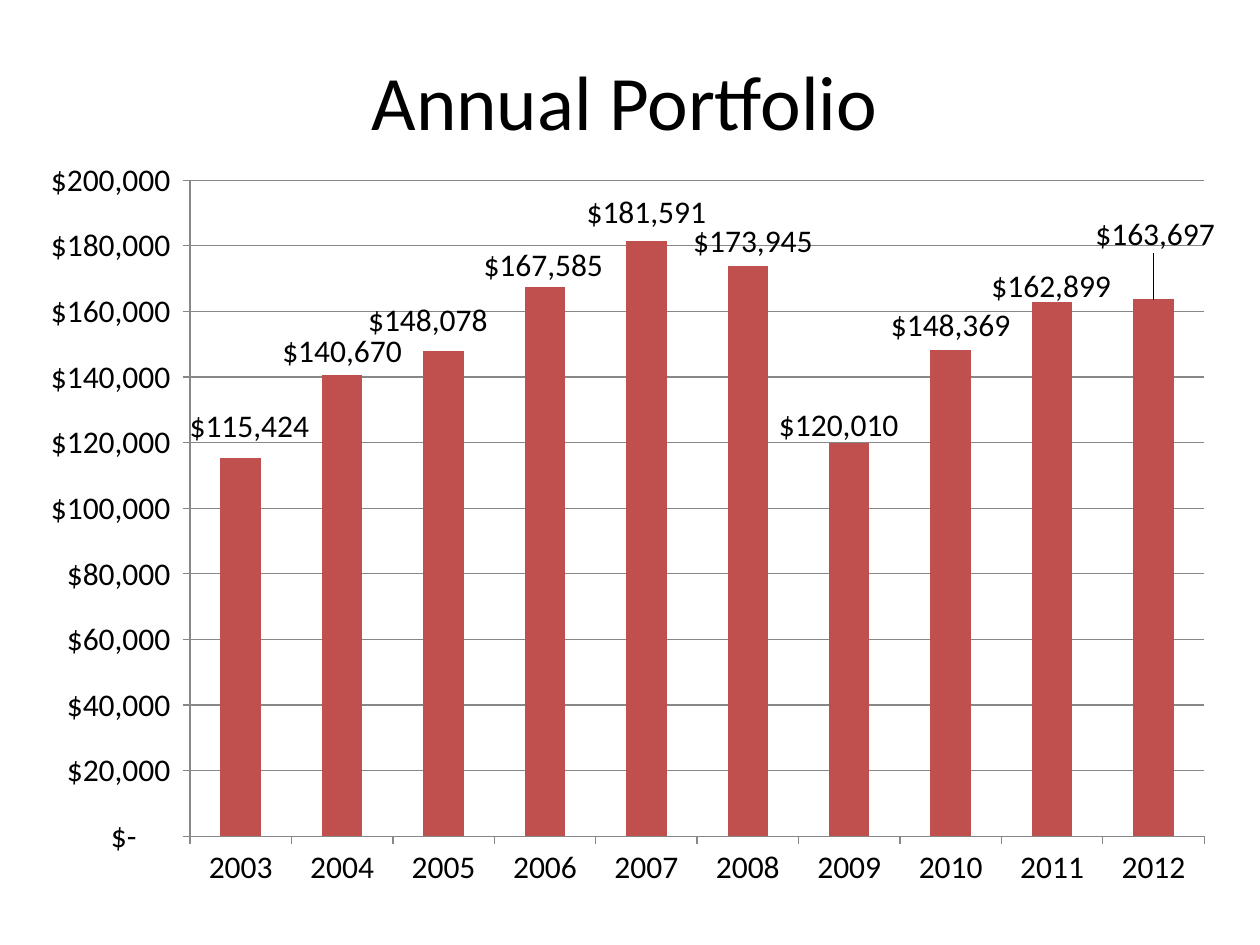
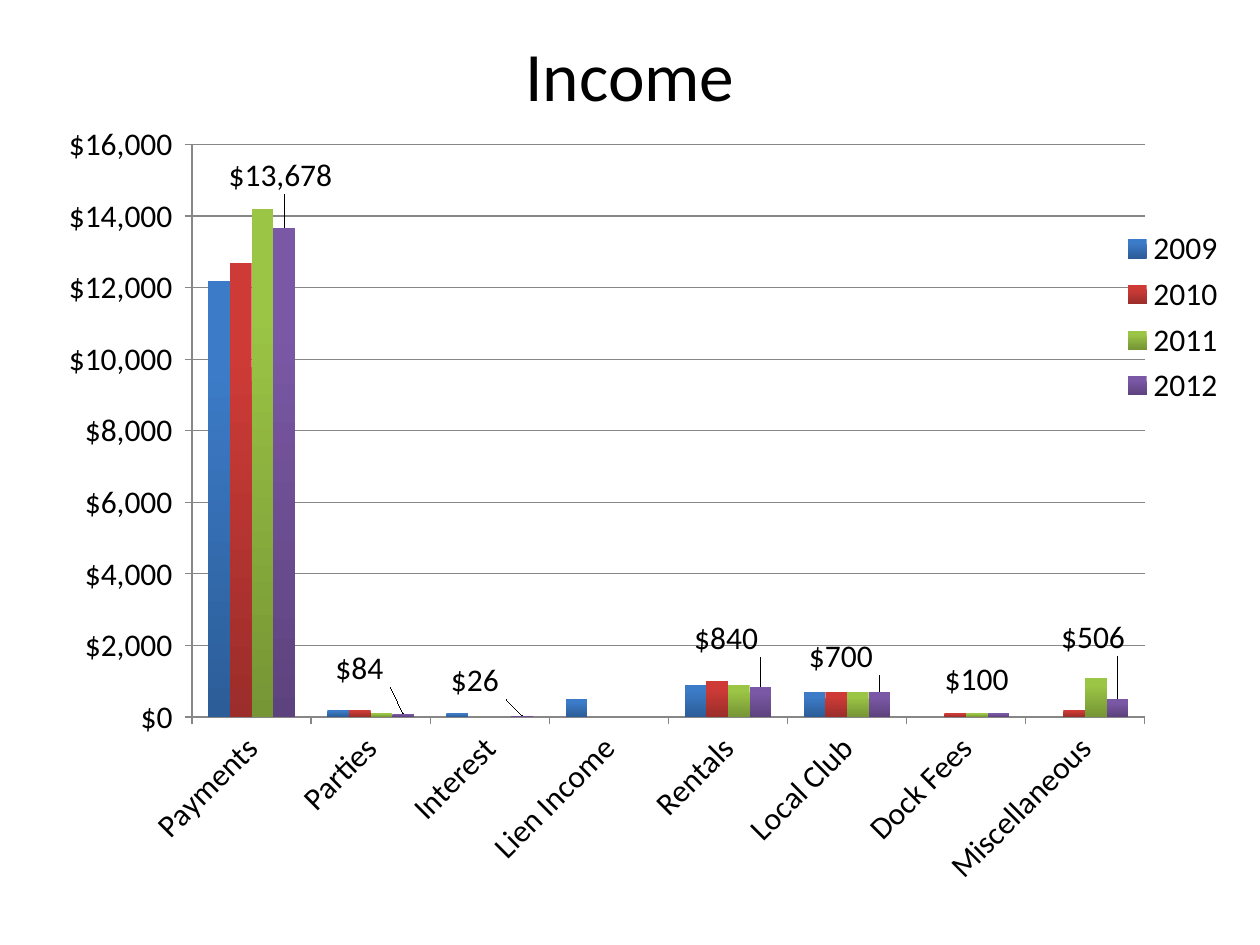
"""Build two financial slides: annual portfolio and income by source."""
from lxml.etree import SubElement
from pptx import Presentation
from pptx.chart.data import CategoryChartData
from pptx.dml.color import RGBColor
from pptx.enum.chart import XL_CHART_TYPE, XL_LABEL_POSITION, XL_LEGEND_POSITION, XL_TICK_MARK
from pptx.enum.text import MSO_ANCHOR, MSO_AUTO_SIZE, PP_ALIGN
from pptx.oxml.ns import qn
from pptx.util import Pt

COLORS = {"text": "000000", "grid": "878787", "portfolio": "C0504D"}
INCOME_GRADIENTS = {
    "2009": ("3C7BC7", "2C5D98"),
    "2010": ("CE3B37", "9B2D2A"),
    "2011": ("9BC545", "769535"),
    "2012": ("7B58A6", "5D437E"),
}
FONT = "Calibri"
ACCOUNTING = r'_("$"* #,##0_);_("$"* \(#,##0\);_("$"* "-"??_);_(@_)'
CURRENCY = r'"$"#,##0_);[Red]\("$"#,##0\)'


def set_layout(parent, index, **settings):
    for old_layout in parent.findall(qn("c:layout")):
        parent.remove(old_layout)
    layout = parent.makeelement(qn("c:layout"))
    parent.insert(index, layout)
    manual = SubElement(layout, qn("c:manualLayout"))
    for tag, value in settings.items():
        SubElement(manual, qn(f"c:{tag}")).set("val", str(value))


def add_column_slide(title, title_size, title_box, chart_box, data, top, step, plot_area, offsets):
    slide = presentation.slides.add_slide(presentation.slide_layouts[5])
    heading = slide.shapes.title
    heading.left, heading.top, heading.width, heading.height = map(Pt, title_box)
    frame = heading.text_frame
    frame.text = title
    frame.auto_size = MSO_AUTO_SIZE.NONE
    frame.vertical_anchor = MSO_ANCHOR.MIDDLE
    frame.paragraphs[0].alignment = PP_ALIGN.CENTER
    title_font = frame.paragraphs[0].runs[0].font
    title_font.name, title_font.size = FONT, Pt(title_size)
    title_font.color.rgb = RGBColor.from_string(COLORS["text"])

    chart = slide.shapes.add_chart(XL_CHART_TYPE.COLUMN_CLUSTERED, *map(Pt, chart_box), data).chart
    chart.has_title = False
    chart.has_legend = False
    chart.font.name, chart.font.size = FONT, Pt(18)
    chart.font.color.rgb = RGBColor.from_string(COLORS["text"])
    values = chart.value_axis
    values.minimum_scale, values.maximum_scale, values.major_unit = 0, top, step
    values.tick_labels.number_format = data.number_format
    values.tick_labels.number_format_is_linked = False
    for line in (values.format.line, values.major_gridlines.format.line, chart.category_axis.format.line):
        line.color.rgb = RGBColor.from_string(COLORS["grid"])
        line.width = Pt(0.75)
    for axis in (values, chart.category_axis):
        axis.major_tick_mark = XL_TICK_MARK.OUTSIDE
        axis.minor_tick_mark = XL_TICK_MARK.NONE
    columns = chart.plots[0]
    columns.gap_width, columns.overlap = 150, 0
    columns.vary_by_categories = False
    left, upper, width, height = plot_area
    set_layout(chart._chartSpace.chart.plotArea, 0, layoutTarget="inner", xMode="edge",
               yMode="edge", x=left, y=upper, w=width, h=height)

    latest = columns.series[-1]
    labels = latest.data_labels
    labels.show_value = True
    labels.position = XL_LABEL_POSITION.OUTSIDE_END
    labels.number_format, labels.number_format_is_linked = data.number_format, False
    labels.font.size = Pt(18)
    for point, (right, down) in offsets.items():
        label = latest.points[point].data_label
        label.position = XL_LABEL_POSITION.OUTSIDE_END
        label.font.size = Pt(18)
        element = labels._element.findall(qn("c:dLbl"))[-1]
        set_layout(element, 1, x=round(right / chart_box[2], 4), y=round(down / chart_box[3], 4))
        number_format = element.makeelement(qn("c:numFmt"))
        number_format.set("formatCode", data.number_format)
        number_format.set("sourceLinked", "0")
        element.insert(2, number_format)
    return chart


presentation = Presentation()
presentation.slide_width, presentation.slide_height = Pt(720), Pt(540)

portfolio = CategoryChartData(number_format=ACCOUNTING)
portfolio.categories = [str(year) for year in range(2003, 2013)]
portfolio.add_series("Series 1", [115424, 140670, 148078, 167585, 181591,
                                  173945, 120010, 148369, 162899, 163697])
portfolio_chart = add_column_slide(
    "Annual Portfolio", 44, (30, 24, 654, 66), (12, 84, 690, 432), portfolio,
    200000, 20000, (0.14, 0.044, 0.84, 0.868),
    {0: (5, -4.5), 2: (-9, -3.5), 3: (-1, 1.5), 4: (0, -2.5), 5: (3, 0),
     6: (-6, 4), 8: (-0.5, 5), 9: (1, -23.5)})
portfolio_fill = portfolio_chart.plots[0].series[0].format.fill
portfolio_fill.solid()
portfolio_fill.fore_color.rgb = RGBColor.from_string(COLORS["portfolio"])

income = CategoryChartData(number_format=CURRENCY)
income.categories = ["Payments", "Parties", "Interest", "Lien Income",
                     "Rentals", "Local Club", "Dock Fees", "Miscellaneous"]
income.add_series("2009", [12200, 200, 100, 500, 900, 700, None, None])
income.add_series("2010", [12700, 200, 0, None, 1000, 700, 100, 200])
income.add_series("2011", [14200, 100, 0, None, 900, 700, 100, 1100])
income.add_series("2012", [13678, 84, 26, None, 840, 700, 100, 506])
income_chart = add_column_slide(
    "Income", 39.6, (54, 12, 612, 60), (18, 60, 690, 462), income,
    16000, 2000, (0.133, 0.049, 0.789, 0.708),
    {0: (0, -16), 1: (-23, -12.5), 2: (-25, -6.5), 4: (-17.5, -14),
     5: (-20, -6.5), 6: (-10.5, -5.5), 7: (-12, -21.5)})
for year_series in income_chart.plots[0].series:
    year_fill = year_series.format.fill
    year_fill.gradient()
    year_fill.gradient_angle = 270
    for stop, color, position in zip(year_fill.gradient_stops, INCOME_GRADIENTS[year_series.name], (0.2, 1)):
        stop.color.rgb = RGBColor.from_string(color)
        stop.position = position

source_labels = income_chart.category_axis.tick_labels
source_labels.font.size = Pt(18)
income_chart.category_axis._element.find(qn("c:txPr")).find(qn("a:bodyPr")).set("rot", "-2700000")
income_chart.has_legend = True
years = income_chart.legend
years.position = XL_LEGEND_POSITION.RIGHT
years.include_in_layout = False
years.font.size = Pt(18)
set_layout(years._element, 1, xMode="edge", yMode="edge", x=0.9, y=0.145, w=0.09, h=0.235)

presentation.save("out.pptx")
